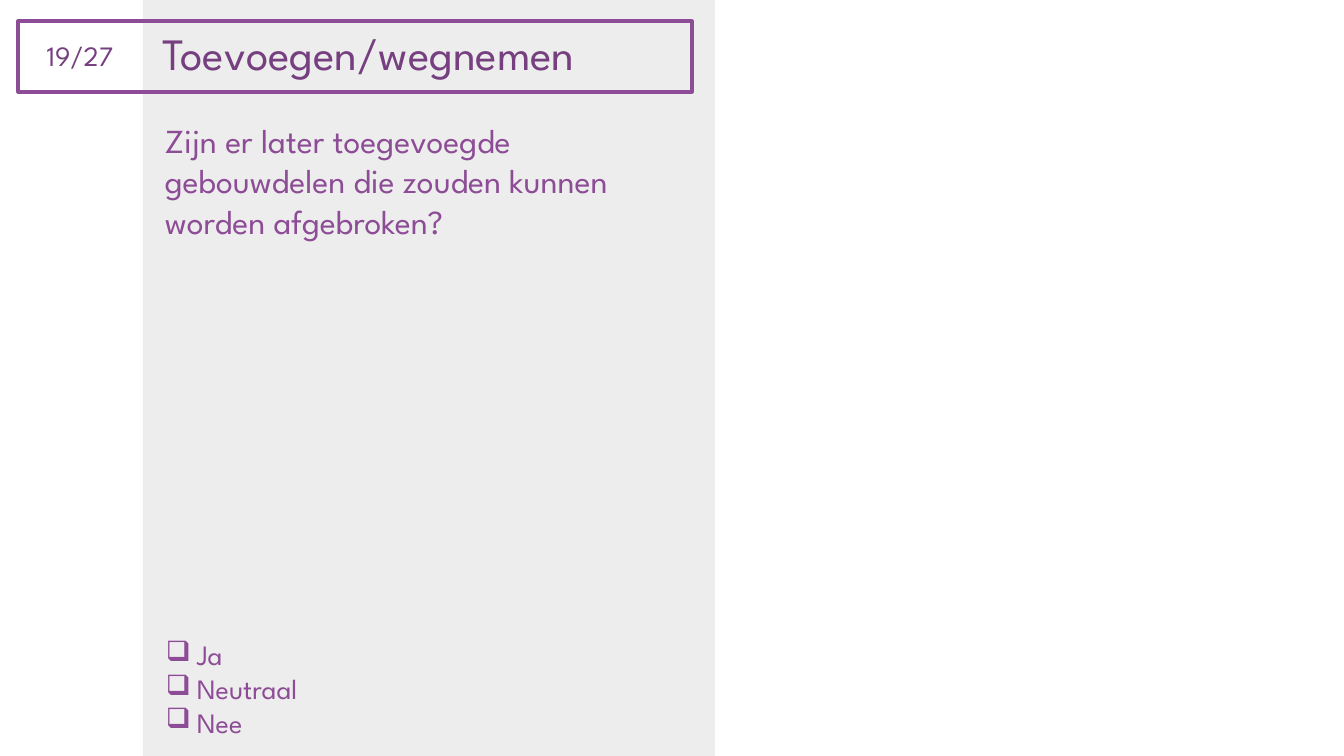
from lxml import etree
from pptx import Presentation
from pptx import util as u
from pptx.dml.color import RGBColor
from pptx.enum import shapes, text
from pptx.oxml.ns import qn

TITLE = "Toevoegen/wegnemen"
COUNTER = "19/27"
QUESTION = "Zijn er later toegevoegde gebouwdelen die zouden kunnen worden afgebroken?"
OPTIONS = ["Ja", "Neutraal", "Nee"]

COLORS = {"panel": "EEEDED", "purple": "8D4D96", "dark": "764080"}
FONT = "League Spartan"
SCALE = 914400 / 100.8
INDENT = 31
LEFT, CENTER = text.PP_ALIGN.LEFT, text.PP_ALIGN.CENTER
TOP, MIDDLE = text.MSO_ANCHOR.TOP, text.MSO_ANCHOR.MIDDLE


def px(n):
    return u.Emu(round(n * SCALE))


def color(name):
    return RGBColor.from_string(COLORS[name])


def place(sp, box):
    for name, value in zip(("left", "top", "width", "height"), box):
        setattr(sp, name, px(value))


def add_rect(s, box):
    sp = s.shapes.add_shape(shapes.MSO_SHAPE.RECTANGLE, *map(px, box))
    sp.shadow.inherit = False
    return sp


def add_bullet(p):
    pPr = p._p.get_or_add_pPr()
    pPr.set("marL", str(px(INDENT)))
    pPr.set("indent", str(-px(INDENT)))
    etree.SubElement(pPr, qn("a:buChar")).set("char", "❑")


def write(sp, lines, size, ink, align=LEFT, anchor=TOP, bullets=False):
    tf = sp.text_frame
    frame = {"word_wrap": True, "auto_size": text.MSO_AUTO_SIZE.NONE, "vertical_anchor": anchor}
    for name, value in frame.items():
        setattr(tf, name, value)
    for i, line in enumerate(lines):
        p = tf.add_paragraph() if i else tf.paragraphs[0]
        p.alignment = align
        if bullets:
            add_bullet(p)
        r = p.add_run()
        r.text = line
        for name, value in {"name": FONT, "size": u.Pt(size), "bold": False}.items():
            setattr(r.font, name, value)
        r.font.color.rgb = color(ink)


def add_text(s, box, *args, **kwargs):
    write(s.shapes.add_textbox(*map(px, box)), *args, **kwargs)


def main():
    prs = Presentation()
    prs.slide_width, prs.slide_height = px(1344), px(756)
    s = prs.slides.add_slide(prs.slide_layouts[5])

    panel = add_rect(s, (143, 0, 572, 756))
    panel.fill.solid()
    panel.fill.fore_color.rgb = color("panel")
    panel.line.fill.background()

    frame = add_rect(s, (18, 21, 674, 71))
    frame.fill.background()
    frame.line.color.rgb = color("purple")
    frame.line.width = u.Pt(2.25)

    title = s.shapes.title
    place(title, (152, 20, 547, 66))
    s.shapes._spTree.append(title._element)
    write(title, [TITLE], 32, "dark", anchor=MIDDLE)

    add_text(s, (156, 633, 252, 112), OPTIONS, 20, "purple", bullets=True)
    add_text(s, (22, 34, 116, 44), [COUNTER], 20, "dark", align=CENTER)
    add_text(s, (155, 115, 547, 132), [QUESTION], 24, "purple")

    prs.save("out.pptx")


if __name__ == "__main__":
    main()
